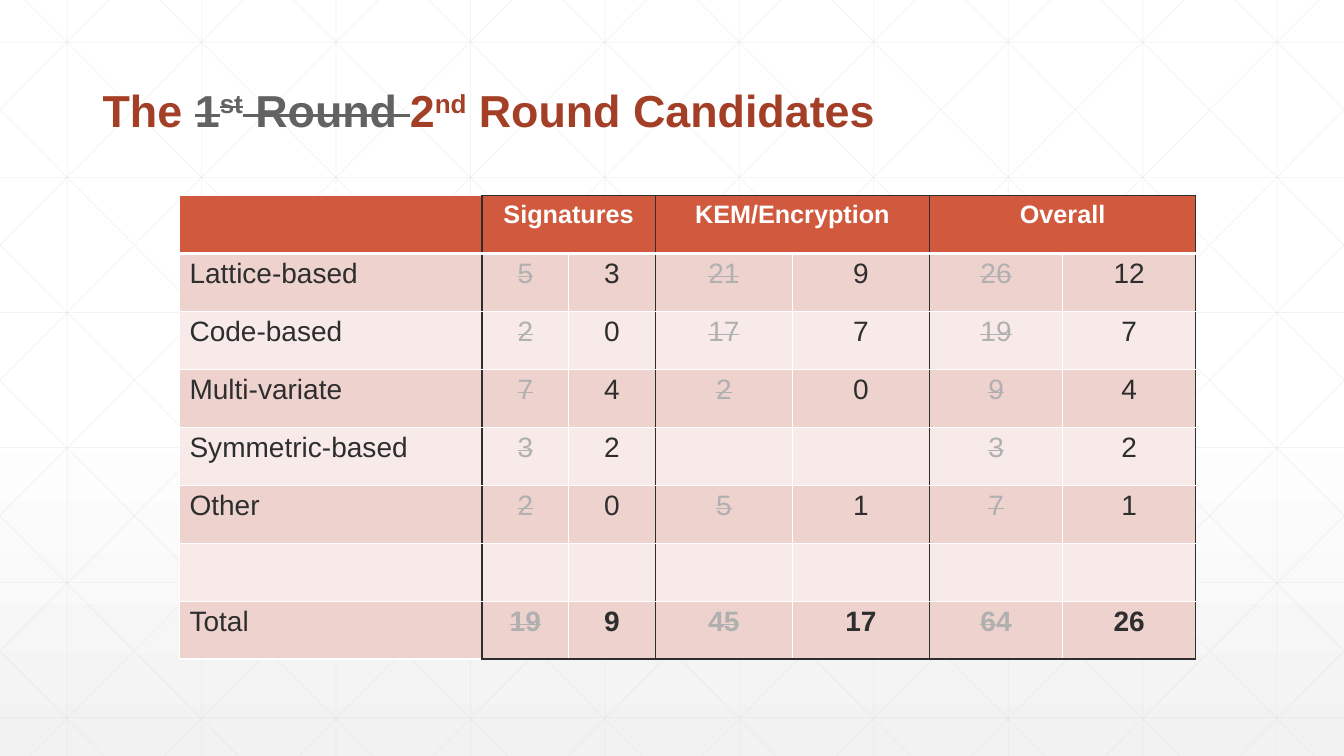
"""Build a slide that compares first and second round candidates by family."""
from lxml.etree import SubElement
from pptx import Presentation
from pptx.dml.color import RGBColor
from pptx.enum.shapes import MSO_CONNECTOR
from pptx.enum.text import MSO_ANCHOR, PP_ALIGN
from pptx.oxml import parse_xml
from pptx.oxml.ns import nsdecls, qn
from pptx.util import Inches, Pt

COLORS = {
    "white": "FFFFFF", "shade": "F2F2F2", "grid": "D9D9D9",
    "title": "A43F27", "struck_title": "616361", "header": "D15A3E",
    "band_dark": "EED2CE", "band_light": "F7EAE8",
    "text": "2D2E2D", "struck": "B0B0B0",
}
WIDTH, HEIGHT = 13.33, 7.5


def add_grid_line(shapes, x1, y1, x2, y2):
    line = shapes.add_connector(
        MSO_CONNECTOR.STRAIGHT, Inches(x1), Inches(y1), Inches(x2), Inches(y2))
    line.line.width = Pt(0.5)
    line.line.color.rgb = RGBColor.from_string(COLORS["grid"])
    properties = line._element.spPr
    color = properties.find(".//" + qn("a:srgbClr"))
    SubElement(color, qn("a:alpha"), val="30000")
    SubElement(properties, qn("a:effectLst"))


def add_border(cell, side, color, width):
    cell._tc.get_or_add_tcPr().append(parse_xml(
        f'<a:ln{side} {nsdecls("a")} w="{Pt(width)}"><a:solidFill>'
        f'<a:srgbClr val="{COLORS[color]}"/></a:solidFill>'
        f'<a:prstDash val="solid"/></a:ln{side}>'))


presentation = Presentation()
presentation.slide_width = Inches(WIDTH)
presentation.slide_height = Inches(HEIGHT)
slide = presentation.slides.add_slide(presentation.slide_layouts[6])

background = slide.background.fill
background.gradient()
background.gradient_angle = 270
stops = slide.background._cSld.find(".//" + qn("a:gsLst"))
for stop in list(stops):
    stops.remove(stop)
for position, color, alpha in [(0, "white", 100), (53, "white", 100), (100, "shade", 65)]:
    stop = SubElement(stops, qn("a:gs"), pos=str(position * 1000))
    stop_color = SubElement(stop, qn("a:srgbClr"), val=COLORS[color])
    SubElement(stop_color, qn("a:alpha"), val=str(alpha * 1000))

PITCH = 4 / 3
grid = slide.shapes.add_group_shape().shapes
for index in range(10):
    x = PITCH * (index + 0.5)
    add_grid_line(grid, x, 0, x, HEIGHT)
for index in range(6):
    y = 0.42 + 1.34 * index
    add_grid_line(grid, 0, y, WIDTH, y)
RUN = 7.45
for index in range(-5, 10):
    start = 0.25 + PITCH * index
    left, right = max(start, 0), min(start + RUN, WIDTH)
    top, bottom = [(x - start) * HEIGHT / RUN for x in (left, right)]
    add_grid_line(grid, left, top, right, bottom)
    add_grid_line(grid, WIDTH - left, top, WIDTH - right, bottom)

title = slide.shapes.add_textbox(Inches(0.92), Inches(0.55), Inches(10.5), Inches(0.86))
title.text_frame.word_wrap = True
title.text_frame.vertical_anchor = MSO_ANCHOR.BOTTOM
paragraph = title.text_frame.paragraphs[0]
paragraph.line_spacing = 0.9
paragraph.font.name = "Arial"
paragraph.font.size = Pt(32)
paragraph.font.bold = True
for text, struck, raised in [
        ("The ", False, False), ("1", True, False), ("st", True, True),
        (" Round ", True, False), ("2", False, False), ("nd", False, True),
        (" Round Candidates", False, False)]:
    run = paragraph.add_run()
    run.text = text
    run.font.color.rgb = RGBColor.from_string(COLORS["struck_title" if struck else "title"])
    if struck:
        run._r.get_or_add_rPr().set("strike", "sngStrike")
    if raised:
        run._r.get_or_add_rPr().set("baseline", "30000")

ROWS = [
    ["", "Signatures", "", "KEM/Encryption", "", "Overall", ""],
    ["Lattice-based", "5", "3", "21", "9", "26", "12"],
    ["Code-based", "2", "0", "17", "7", "19", "7"],
    ["Multi-variate", "7", "4", "2", "0", "9", "4"],
    ["Symmetric-based", "3", "2", "", "", "3", "2"],
    ["Other", "2", "0", "5", "1", "7", "1"],
    ["", "", "", "", "", "", ""],
    ["Total", "19", "9", "45", "17", "64", "26"],
]
COLUMN_WIDTHS = [3, 0.86, 0.86, 1.36, 1.36, 1.32, 1.32]
LAST = len(ROWS) - 1
table = slide.shapes.add_table(
    len(ROWS), len(COLUMN_WIDTHS),
    Inches(1.78), Inches(1.94), Inches(10.07), Inches(4.6)).table
for column, width in zip(table.columns, COLUMN_WIDTHS):
    column.width = Inches(width)
for first in (1, 3, 5):
    table.cell(0, first).merge(table.cell(0, first + 1))

for r, values in enumerate(ROWS):
    for c, value in enumerate(values):
        cell = table.cell(r, c)
        is_header, old_round = r == 0, c % 2 == 1
        add_border(cell, "L", "text" if old_round else "white", 1)
        add_border(cell, "R", "white" if old_round and not is_header else "text", 1)
        add_border(cell, "T", "text" if is_header and c else "white", 3 if r == 1 else 1)
        add_border(cell, "B", "text" if r == LAST and c else "white", 3 if is_header else 1)
        cell.fill.solid()
        band = "header" if is_header else "band_dark" if r % 2 else "band_light"
        cell.fill.fore_color.rgb = RGBColor.from_string(COLORS[band])
        if not value:
            continue
        paragraph = cell.text_frame.paragraphs[0]
        paragraph.alignment = PP_ALIGN.CENTER if c else PP_ALIGN.LEFT
        run = paragraph.add_run()
        run.text = value
        run.font.name = "Arial"
        run.font.size = Pt(18 if is_header else 20)
        run.font.bold = is_header or (r == LAST and c > 0)
        color = "white" if is_header else "struck" if old_round else "text"
        run.font.color.rgb = RGBColor.from_string(COLORS[color])
        if old_round and not is_header:
            run._r.get_or_add_rPr().set("strike", "sngStrike")

presentation.save("out.pptx")
